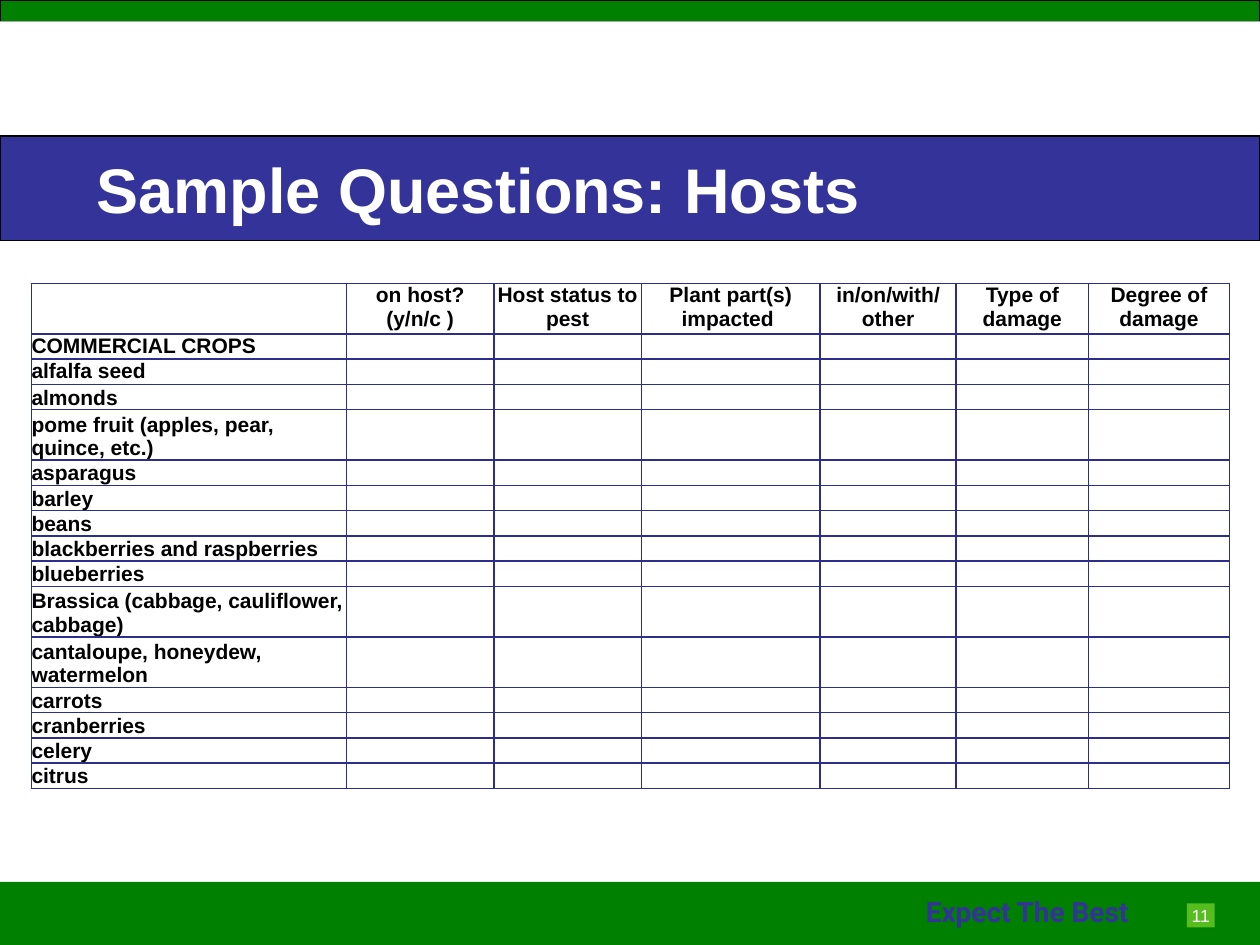
from lxml.etree import SubElement
from pptx import Presentation
from pptx.dml.color import RGBColor
from pptx.enum.shapes import MSO_SHAPE
from pptx.enum.text import MSO_ANCHOR, MSO_AUTO_SIZE, PP_ALIGN
from pptx.oxml.ns import qn
from pptx.util import Inches, Pt

GREEN = RGBColor(0x00, 0x80, 0x00)
LIME = RGBColor(0x57, 0xBD, 0x1F)
NAVY = RGBColor(0x33, 0x33, 0x99)
GRID = RGBColor(0x2D, 0x2D, 0x8A)
BLACK = RGBColor(0x00, 0x00, 0x00)
WHITE = RGBColor(0xFF, 0xFF, 0xFF)

WIDTH, HEIGHT = 10, 7.5
TABLE_LEFT, TABLE_TOP = 0.25, 2.25
COLUMNS = [2.5, 1.17, 1.17, 1.42, 1.08, 1.05, 1.12]
ROW, TALL_ROW = 0.2, 0.37
CELL_SIZE = 12

HEADERS = ["", "on host? (y/n/c )", "Host status to pest", "Plant part(s) impacted ",
           "in/on/with/\nother", "Type of damage", "Degree of damage"]
TOP_HOSTS = ["COMMERCIAL CROPS", "alfalfa seed"]
HOSTS = TOP_HOSTS + [
    "almonds", "pome fruit (apples, pear, quince, etc.)", "asparagus", "barley",
    "beans", "blackberries and raspberries", "blueberries",
    "Brassica (cabbage, cauliflower, cabbage)", "cantaloupe, honeydew, watermelon",
    "carrots", "cranberries", "celery", "citrus"]
ONE_LINE_LIMIT = 30

CELL_FORMAT = {"size": Pt(CELL_SIZE), "name": "Arial", "bold": True}
TITLE_FORMAT = {"size": Pt(36), "name": "Arial", "bold": True}
SLOGAN_FORMAT = {"size": Pt(16), "name": "Roboto", "bold": True}
NUMBER_FORMAT = {"size": Pt(10), "name": "Arial"}


def write(frame, text, values, color, align=PP_ALIGN.LEFT):
    para = frame.paragraphs[0]
    para.text = text
    para.alignment = align
    for span in para.runs:
        for name, value in values.items():
            setattr(span.font, name, value)
        span.font.color.rgb = color
    return para


def add_band(page, left, top, width, height, fill, line=None):
    band = page.shapes.add_shape(MSO_SHAPE.RECTANGLE, Inches(left), Inches(top),
                                 Inches(width), Inches(height))
    band.shadow.inherit = False
    band.fill.solid()
    band.fill.fore_color.rgb = fill
    if line is None:
        band.line.fill.background()
    else:
        band.line.color.rgb = BLACK
        band.line.width = Pt(line)
    return band


def add_text(page, left, top, width, height, text, values, color):
    box = page.shapes.add_textbox(Inches(left), Inches(top), Inches(width), Inches(height))
    box.text_frame.word_wrap = True
    write(box.text_frame, text, values, color)
    return box


def add_borders(cell):
    properties = cell._tc.get_or_add_tcPr()
    for position, side in enumerate(("a:lnL", "a:lnR", "a:lnT", "a:lnB")):
        line = SubElement(properties, qn(side), w=str(Pt(1)))
        fill = SubElement(line, qn("a:solidFill"))
        SubElement(fill, qn("a:srgbClr"), val=str(GRID))
        properties.insert(position, line)


def fill_cell(cell, text, align, anchor):
    cell.fill.background()
    cell.margin_left = cell.margin_right = cell.margin_top = cell.margin_bottom = 0
    cell.vertical_anchor = anchor
    para = write(cell.text_frame, text, CELL_FORMAT, BLACK, align)
    # Line breaks and empty cells take the size of the text
    size = str(CELL_SIZE * 100)
    for line_break in para._p.findall(qn("a:br")):
        SubElement(line_break, qn("a:rPr"), sz=size)
    if not text:
        SubElement(para._p, qn("a:endParaRPr"), sz=size)
    add_borders(cell)


def add_host_table(page):
    rows = [HEADERS] + [[host] + [""] * (len(COLUMNS) - 1) for host in HOSTS]
    heights = [TALL_ROW] + [TALL_ROW if len(host) > ONE_LINE_LIMIT else ROW for host in HOSTS]
    table = page.shapes.add_table(len(rows), len(COLUMNS), Inches(TABLE_LEFT), Inches(TABLE_TOP),
                                  Inches(sum(COLUMNS)), Inches(sum(heights))).table
    table.first_row = table.horz_banding = False
    for column, width in zip(table.columns, COLUMNS):
        column.width = Inches(width)
    for index, (texts, height) in enumerate(zip(rows, heights)):
        table.rows[index].height = Inches(height)
        align = PP_ALIGN.LEFT if index else PP_ALIGN.CENTER
        anchor = MSO_ANCHOR.TOP if index <= len(TOP_HOSTS) else MSO_ANCHOR.BOTTOM
        for column, text in enumerate(texts):
            fill_cell(table.cell(index, column), text, align, anchor)


def main():
    deck = Presentation()
    deck.slide_width, deck.slide_height = Inches(WIDTH), Inches(HEIGHT)
    page = deck.slides.add_slide(deck.slide_layouts[6])

    # Bands across the page
    add_band(page, 0, 0, WIDTH, 0.17, GREEN, 0)
    add_band(page, 0, 0.17, WIDTH, 0.83, WHITE)
    add_band(page, 0, 7, WIDTH, 0.5, GREEN)

    # Page number
    number = add_band(page, 9.42, 7.17, 0.22, 0.19, LIME)
    number.text_frame.word_wrap = False
    number.text_frame.vertical_anchor = MSO_ANCHOR.MIDDLE
    write(number.text_frame, "11", NUMBER_FORMAT, WHITE, PP_ALIGN.CENTER)

    # Title and slogan
    add_band(page, 0, 1.08, WIDTH, 0.83, NAVY, 0.75)
    slogan = add_text(page, 7.25, 7.05, 2.1, 0.37, "Expect The Best", SLOGAN_FORMAT, NAVY)
    slogan.text_frame.auto_size = MSO_AUTO_SIZE.SHAPE_TO_FIT_TEXT
    title = add_text(page, 0.67, 1.08, 8.92, 0.83, "Sample Questions: Hosts", TITLE_FORMAT, WHITE)
    title.text_frame.vertical_anchor = MSO_ANCHOR.MIDDLE

    # Table of hosts
    add_host_table(page)

    deck.save("out.pptx")


if __name__ == "__main__":
    main()
